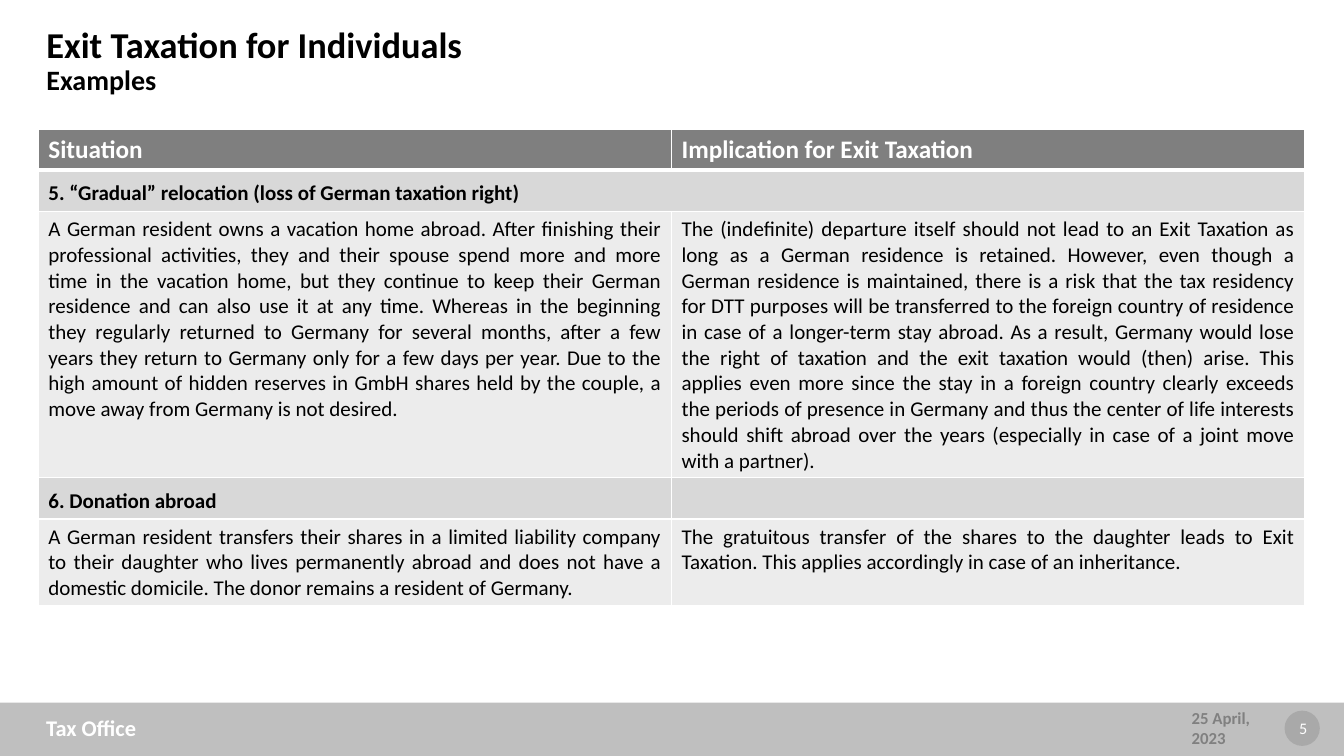
from lxml import etree
from pptx import Presentation
from pptx import util as u
from pptx.dml.color import RGBColor
from pptx.enum import shapes, text
from pptx.oxml.ns import qn

PX = 9144
BLACK = RGBColor(0x00, 0x00, 0x00)
WHITE = RGBColor(0xFF, 0xFF, 0xFF)
GRAY = RGBColor(0x80, 0x80, 0x80)
FOOTER = RGBColor(0xBF, 0xBF, 0xBF)
HEADER = RGBColor(0x7F, 0x7F, 0x7F)
SECTION = RGBColor(0xD8, 0xD8, 0xD8)
BODY = RGBColor(0xEC, 0xEC, 0xEC)

LEFT = text.PP_ALIGN.LEFT
CENTER = text.PP_ALIGN.CENTER
JUSTIFY = text.PP_ALIGN.JUSTIFY
TOP = text.MSO_ANCHOR.TOP
MIDDLE = text.MSO_ANCHOR.MIDDLE
BOTTOM = text.MSO_ANCHOR.BOTTOM

KINDS = {
    "header": (HEADER, TOP, LEFT, {"size": 18, "bold": True, "color": WHITE}),
    "section": (SECTION, BOTTOM, LEFT, {"size": 15, "bold": True, "color": BLACK}),
    "body": (BODY, TOP, JUSTIFY, {"size": 15, "bold": False, "color": BLACK}),
}

ROWS = [
    ("header", 41, ["Situation", "Implication for Exit Taxation"]),
    ("section", 41, ["5. “Gradual” relocation (loss of German taxation right)"]),
    ("body", 264, [
        "A German resident owns a vacation home abroad. After finishing their professional "
        "activities, they and their spouse spend more and more time in the vacation home, but "
        "they continue to keep their German residence and can also use it at any time. Whereas "
        "in the beginning they regularly returned to Germany for several months, after a few "
        "years they return to Germany only for a few days per year. Due to the high amount of "
        "hidden reserves in GmbH shares held by the couple, a move away from Germany is not "
        "desired.",
        "The (indefinite) departure itself should not lead to an Exit Taxation as long as a "
        "German residence is retained. However, even though a German residence is maintained, "
        "there is a risk that the tax residency for DTT purposes will be transferred to the "
        "foreign country of residence in case of a longer-term stay abroad. As a result, "
        "Germany would lose the right of taxation and the exit taxation would (then) arise. "
        "This applies even more since the stay in a foreign country clearly exceeds the periods "
        "of presence in Germany and thus the center of life interests should shift abroad over "
        "the years (especially in case of a joint move with a partner)."]),
    ("section", 41, ["6. Donation abroad", ""]),
    ("body", 86, [
        "A German resident transfers their shares in a limited liability company to their "
        "daughter who lives permanently abroad and does not have a domestic domicile. The donor "
        "remains a resident of Germany.",
        "The gratuitous transfer of the shares to the daughter leads to Exit Taxation. This "
        "applies accordingly in case of an inheritance."]),
]


class Deck:
    font = "Calibri"

    def __init__(self, w, h):
        self.prs = Presentation()
        self.prs.slide_width, self.prs.slide_height = w * PX, h * PX
        self.s = self.prs.slides.add_slide(self.prs.slide_layouts[5])

    def run(self, p, words, size, color, bold=False):
        r = p.add_run()
        r.text = words
        for name, value in {"name": self.font, "size": u.Pt(size), "bold": bold}.items():
            setattr(r.font, name, value)
        r.font.color.rgb = color

    def shape(self, kind, box, color, opacity=100):
        sp = self.s.shapes.add_shape(kind, *(v * PX for v in box))
        sp.shadow.inherit = False
        sp.fill.solid()
        sp.fill.fore_color.rgb = color
        sp.line.fill.background()
        if opacity < 100:
            clr = sp.fill._xPr.find(f"{qn('a:solidFill')}/{qn('a:srgbClr')}")
            etree.SubElement(clr, qn("a:alpha"), val=str(opacity * 1000))

    def label(self, box, words, align=LEFT, **fmt):
        tf = self.s.shapes.add_textbox(*(v * PX for v in box)).text_frame
        tf.word_wrap = True
        tf.vertical_anchor = MIDDLE
        p = tf.paragraphs[0]
        p.alignment = align
        self.run(p, words, **fmt)

    def title(self, box, lines):
        sp = self.s.shapes.title
        for name, value in zip(("left", "top", "width", "height"), box):
            setattr(sp, name, value * PX)
        tf = sp.text_frame
        for name, value in {"auto_size": text.MSO_AUTO_SIZE.NONE, "word_wrap": True,
                            "vertical_anchor": MIDDLE}.items():
            setattr(tf, name, value)
        p = tf.paragraphs[0]
        p.alignment = LEFT
        p.line_spacing = 0.9
        for i, (words, size) in enumerate(lines):
            if i:
                p.add_line_break()
            self.run(p, words, size, BLACK, True)

    def borders(self, cell, bottom, top):
        tcPr = cell._tc.get_or_add_tcPr()
        for side, width in {"L": 1, "R": 1, "T": top, "B": bottom}.items():
            ln = etree.SubElement(tcPr, qn(f"a:ln{side}"), w=str(u.Pt(width)))
            fill = etree.SubElement(ln, qn("a:solidFill"))
            etree.SubElement(fill, qn("a:srgbClr"), val=str(WHITE))

    def table(self, left, top, width, rows, cols):
        height = sum(h for _, h, _ in rows)
        box = (v * PX for v in (left, top, width, height))
        tbl = self.s.shapes.add_table(len(rows), cols, *box).table
        for i, (kind, h, words) in enumerate(rows):
            tbl.rows[i].height = h * PX
            color, anchor, align, fmt = KINDS[kind]
            for j in range(cols):
                cell = tbl.cell(i, j)
                self.borders(cell, 3 if i == 0 else 1, 3 if i == 1 else 1)
                cell.fill.solid()
                cell.fill.fore_color.rgb = color
                cell.vertical_anchor = anchor
                if j < len(words) and words[j]:
                    p = cell.text_frame.paragraphs[0]
                    p.alignment = align
                    self.run(p, words[j], **fmt)
            if len(words) < cols:
                tbl.cell(i, 0).merge(tbl.cell(i, cols - 1))


def main():
    d = Deck(1333, 750)
    d.shape(shapes.MSO_SHAPE.RECTANGLE, (0, 697, 1333, 53), FOOTER)
    d.shape(shapes.MSO_SHAPE.OVAL, (1274, 705, 35, 35), GRAY, opacity=34)
    d.label((36, 702, 450, 40), "Tax Office", size=16, color=WHITE, bold=True)
    d.label((1172, 702, 104, 40), "25 April, 2023", size=12, color=GRAY, bold=True)
    d.label((1267, 702, 51, 40), "5", CENTER, size=11.5, color=WHITE)
    d.title((36, 0, 1238, 123), [("Exit Taxation for Individuals", 26), ("Examples", 20)])
    d.table(38, 128, 1256, ROWS, 2)
    d.prs.save("out.pptx")


if __name__ == "__main__":
    main()
